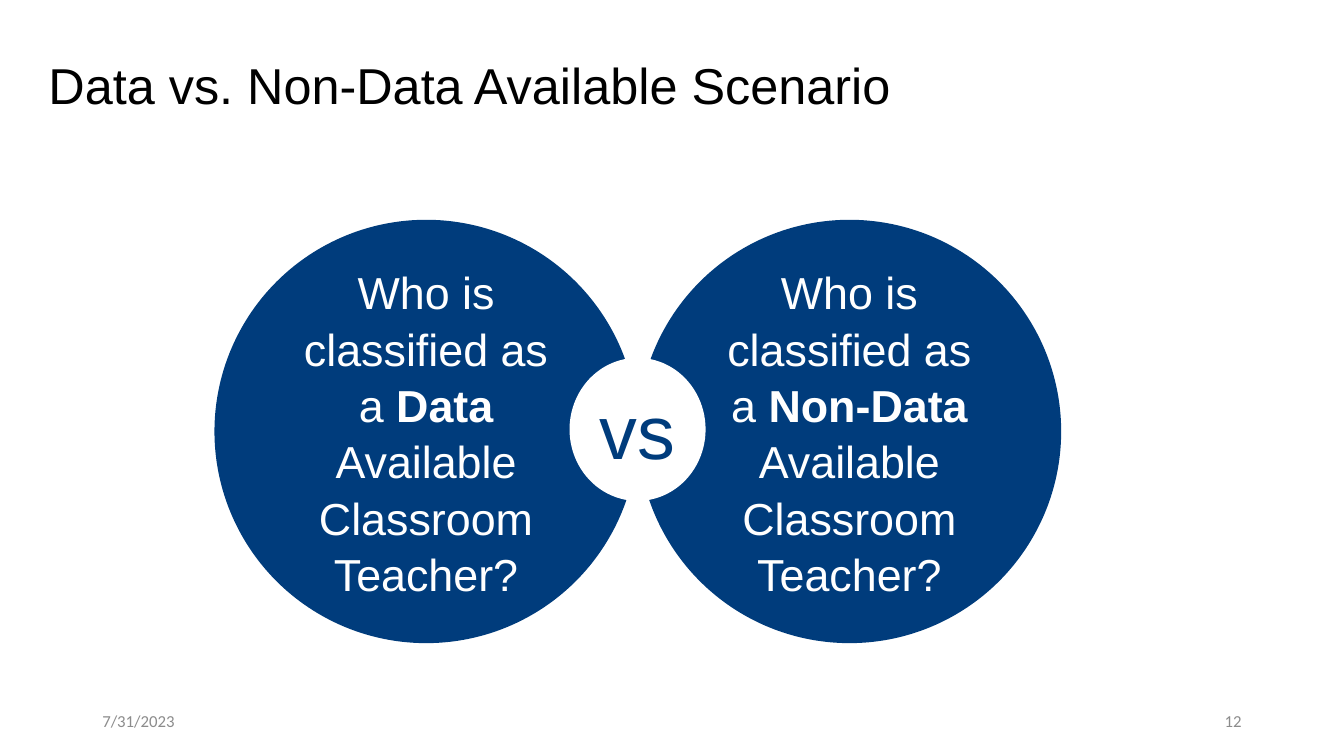
from pptx import Presentation
from pptx.dml.color import RGBColor
from pptx.enum.shapes import MSO_SHAPE
from pptx.enum.text import MSO_ANCHOR, PP_ALIGN
from pptx.util import Pt

NAVY = "003C7C"
WHITE = "FFFFFF"


def set_font(font, size, color, name="Arial"):
    font.size = Pt(size)
    font.name = name
    font.color.rgb = RGBColor.from_string(color)


def add_circle(left, top, width, height, fill):
    circle = page.shapes.add_shape(
        MSO_SHAPE.OVAL, Pt(left), Pt(top), Pt(width), Pt(height))
    circle.shadow.inherit = False
    circle.fill.solid()
    circle.fill.fore_color.rgb = RGBColor.from_string(fill)
    circle.line.fill.background()
    circle.text_frame.vertical_anchor = MSO_ANCHOR.MIDDLE
    circle.text_frame.paragraphs[0].alignment = PP_ALIGN.CENTER
    return circle


deck = Presentation()
deck.slide_width = Pt(960)
deck.slide_height = Pt(540)
page = deck.slides.add_slide(deck.slide_layouts[5])

title = page.shapes.title
title.left, title.top, title.width, title.height = Pt(27.4), Pt(10.8), Pt(828), Pt(104.4)
title.text_frame.text = "Data vs. Non-Data Available Scenario"
title.text_frame.vertical_anchor = MSO_ANCHOR.MIDDLE
para = title.text_frame.paragraphs[0]
para.alignment = PP_ALIGN.LEFT
para.line_spacing = 0.9
set_font(para.font, 36, "000000")

diameter = 302.4
for index, group in enumerate(["Data", "Non-Data"]):
    circle = add_circle(153.2 + index * diameter, 157, diameter, diameter, NAVY)
    circle.text_frame.word_wrap = True
    para = circle.text_frame.paragraphs[0]
    para.line_spacing = 1.05
    set_font(para.font, 32, WHITE)
    for text, bold in [("Who is classified as a ", False), (group, True),
                       (" Available Classroom Teacher?", False)]:
        span = para.add_run()
        span.text = text
        span.font.bold = bold

badge = add_circle(406.8, 255.6, 97.2, 102.2, WHITE)
badge.text_frame.word_wrap = False
para = badge.text_frame.paragraphs[0]
para.text = "vs"
set_font(para.font, 54, NAVY)

for text, left, alignment in [("7/31/2023", 66, PP_ALIGN.LEFT),
                              ("12", 678, PP_ALIGN.RIGHT)]:
    box = page.shapes.add_textbox(Pt(left), Pt(500.5), Pt(216), Pt(28.8))
    box.text_frame.word_wrap = True
    box.text_frame.vertical_anchor = MSO_ANCHOR.MIDDLE
    para = box.text_frame.paragraphs[0]
    para.text = text
    para.alignment = alignment
    set_font(para.font, 12, "8C8C8C", "Calibri")

deck.save("out.pptx")
